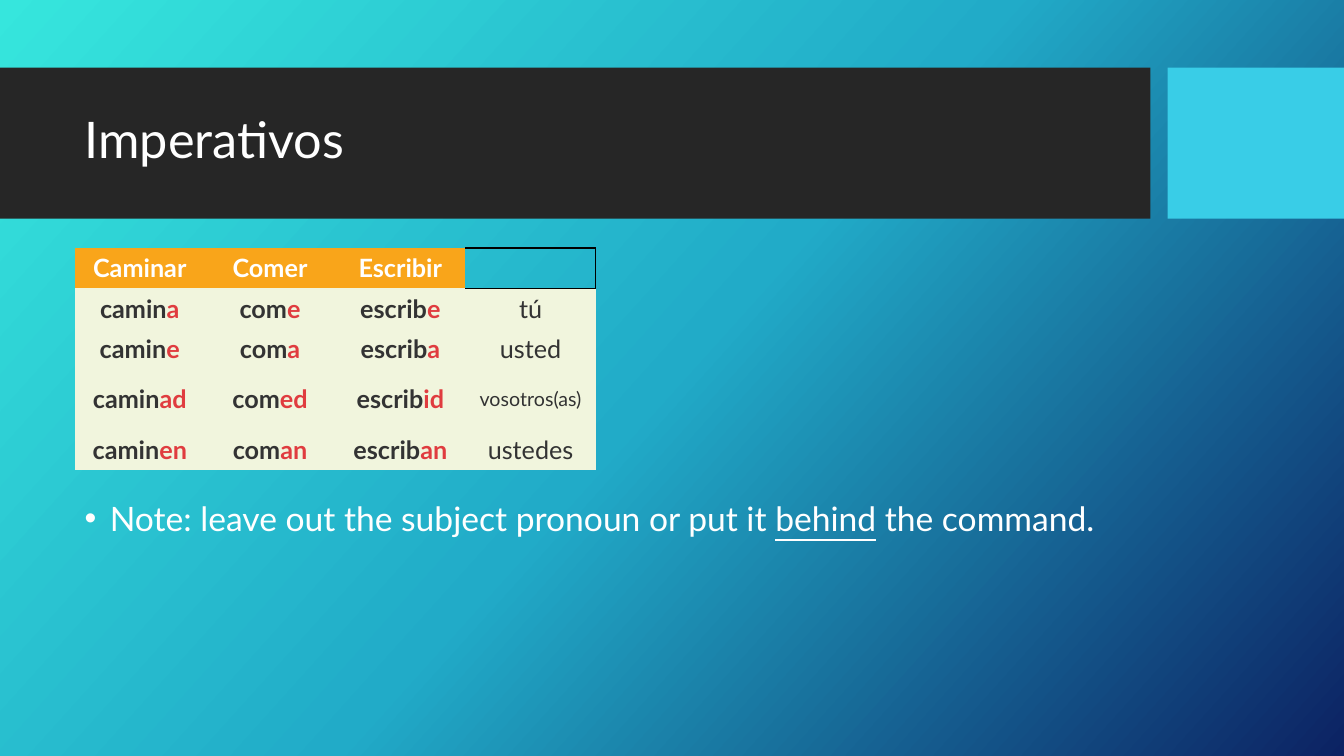
from copy import deepcopy
from dataclasses import dataclass

from lxml import etree
from pptx import Presentation
from pptx.dml.color import RGBColor
from pptx.enum.shapes import MSO_SHAPE
from pptx.enum.text import MSO_ANCHOR, PP_ALIGN
from pptx.oxml.ns import qn
from pptx.util import Inches, Pt

RECT = MSO_SHAPE.RECTANGLE
MIDDLE = MSO_ANCHOR.MIDDLE
TOP = MSO_ANCHOR.TOP
CENTER = PP_ALIGN.CENTER
LEFT = PP_ALIGN.LEFT
PLAIN_GRID = "{2D5ABB26-0587-4C30-8999-92F81FD0307C}"


@dataclass(frozen=True)
class Theme:
    font: str = "Lato"
    white: str = "FFFFFF"
    black: str = "000000"
    band: str = "262626"
    accent: str = "39CDE7"
    head: str = "F9A51A"
    body: str = "F1F5DD"
    ink: str = "333333"
    ending: str = "E03C3F"
    glow: tuple = ((0, "36E6DD"), (0.5, "21ABC8"), (1, "0C2263"))
    angle: int = 318
    title: int = 36
    note: int = 24
    cell: int = 18
    small: int = 14


def apply(target, values):
    for name, value in values.items():
        setattr(target, name, value)


class Page:
    def __init__(self, deck, theme):
        self.theme = theme
        self.slide = deck.slides.add_slide(deck.slide_layouts[5])
        self.shapes = self.slide.shapes

    def backdrop(self):
        fill = self.slide.background.fill
        fill.gradient()
        fill.gradient_angle = self.theme.angle
        stops = self.slide.element.find(".//" + qn("a:gsLst"))
        stops.append(deepcopy(stops[-1]))
        for stop, (place, color) in zip(fill.gradient_stops, self.theme.glow):
            stop.position = place
            stop.color.rgb = RGBColor.from_string(color)

    def bar(self, box, color):
        shape = self.shapes.add_shape(RECT, *map(Inches, box))
        shape.shadow.inherit = False
        shape.fill.solid()
        shape.fill.fore_color.rgb = RGBColor.from_string(color)
        shape.line.fill.background()

    def words(self, para, runs, size, align=LEFT):
        """Each run is a text, a colour and a dict of font values."""
        para.alignment = align
        for text, color, style in runs:
            run = para.add_run()
            run.text = text
            apply(run.font, {"name": self.theme.font, "size": Pt(size), **style})
            run.font.color.rgb = RGBColor.from_string(color)

    def title(self, text, box):
        shape = self.shapes.title
        apply(shape, dict(zip(("left", "top", "width", "height"), map(Inches, box))))
        apply(shape.text_frame, {"vertical_anchor": MIDDLE, "word_wrap": True})
        para = shape.text_frame.paragraphs[0]
        para.line_spacing = 0.9
        self.words(para, [(text, self.theme.white, {})], self.theme.title)
        # Bring the title in front of the band
        self.shapes.element.append(shape.element)

    def bullet(self, runs, box):
        frame = self.shapes.add_textbox(*map(Inches, box)).text_frame
        apply(frame, {"word_wrap": True, "vertical_anchor": TOP})
        para = frame.paragraphs[0]
        props = para._p.get_or_add_pPr()
        props.set("marL", str(Inches(0.25)))
        props.set("indent", str(-Inches(0.25)))
        etree.SubElement(props, qn("a:buFont"), typeface="Arial")
        etree.SubElement(props, qn("a:buChar"), char="•")
        para.line_spacing = 0.8
        self.words(para, runs, self.theme.note)

    def border(self, cell, sides):
        props = cell._tc.get_or_add_tcPr()
        for place, side in enumerate(sides):
            line = etree.Element(qn("a:ln" + side), w=str(Pt(1)))
            fill = etree.SubElement(line, qn("a:solidFill"))
            etree.SubElement(fill, qn("a:srgbClr"), val=self.theme.black)
            props.insert(place, line)

    def table(self, rows, heights, box):
        frame = self.shapes.add_table(len(rows), len(rows[0]), *map(Inches, box))
        grid = frame.table
        apply(grid, {"first_row": False, "horz_banding": False})
        grid._tbl.tblPr.find(qn("a:tableStyleId")).text = PLAIN_GRID
        for row, height in zip(grid.rows, heights):
            row.height = Inches(height)
        for r, row in enumerate(rows):
            for c, (fill, size, runs) in enumerate(row):
                cell = grid.cell(r, c)
                cell.vertical_anchor = MIDDLE
                if fill == self.theme.body:
                    pad = (0.1, 0.05)
                else:
                    pad = (0.07, 0.03)
                names = ("margin_left", "margin_top", "margin_right", "margin_bottom")
                apply(cell, dict(zip(names, map(Inches, pad * 2))))
                self.words(cell.text_frame.paragraphs[0], runs, size, CENTER)
                if fill:
                    cell.fill.solid()
                    cell.fill.fore_color.rgb = RGBColor.from_string(fill)
                else:
                    cell.fill.background()
                    self.border(cell, "RTB")


def verb_row(theme, endings, person, size):
    bold = {"bold": True}
    row = [
        (theme.body, theme.cell, [(stem, theme.ink, bold), (end, theme.ending, bold)])
        for stem, end in zip(("camin", "com", "escrib"), endings)
    ]
    return row + [(theme.body, size, [(person, theme.ink, {"bold": False})])]


def main():
    theme = Theme()
    deck = Presentation()
    apply(deck, {"slide_width": Inches(13.33), "slide_height": Inches(7.5)})
    page = Page(deck, theme)

    # Background and title band
    page.backdrop()
    page.bar((0, 0.67, 11.41, 1.5), theme.band)
    page.bar((11.58, 0.67, 1.75, 1.5), theme.accent)
    page.title("Imperativos", (0.74, 0.82, 10.51, 1.18))

    # Command forms: singular above, plural below
    head = [
        (theme.head, theme.cell, [(verb, theme.white, {"bold": True})])
        for verb in ("Caminar", "Comer", "Escribir")
    ]
    single = [
        head + [(None, theme.cell, [])],
        verb_row(theme, ("a", "e", "e"), "tú", theme.cell),
        verb_row(theme, ("e", "a", "a"), "usted", theme.cell),
    ]
    plural = [
        verb_row(theme, ("ad", "ed", "id"), "vosotros(as)", theme.small),
        verb_row(theme, ("en", "an", "an"), "ustedes", theme.cell),
    ]
    page.table(single, (0.4, 0.4, 0.4), (0.74, 2.46, 5.17, 1.2))
    page.table(plural, (0.6, 0.4), (0.74, 3.66, 5.17, 1))

    # Usage note
    page.bullet(
        [
            ("Note: leave out the subject pronoun or put it ", theme.white, {}),
            ("behind", theme.white, {"underline": True}),
            (" the command.", theme.white, {}),
        ],
        (0.74, 4.97, 10.51, 0.79),
    )
    deck.save("out.pptx")


if __name__ == "__main__":
    main()
